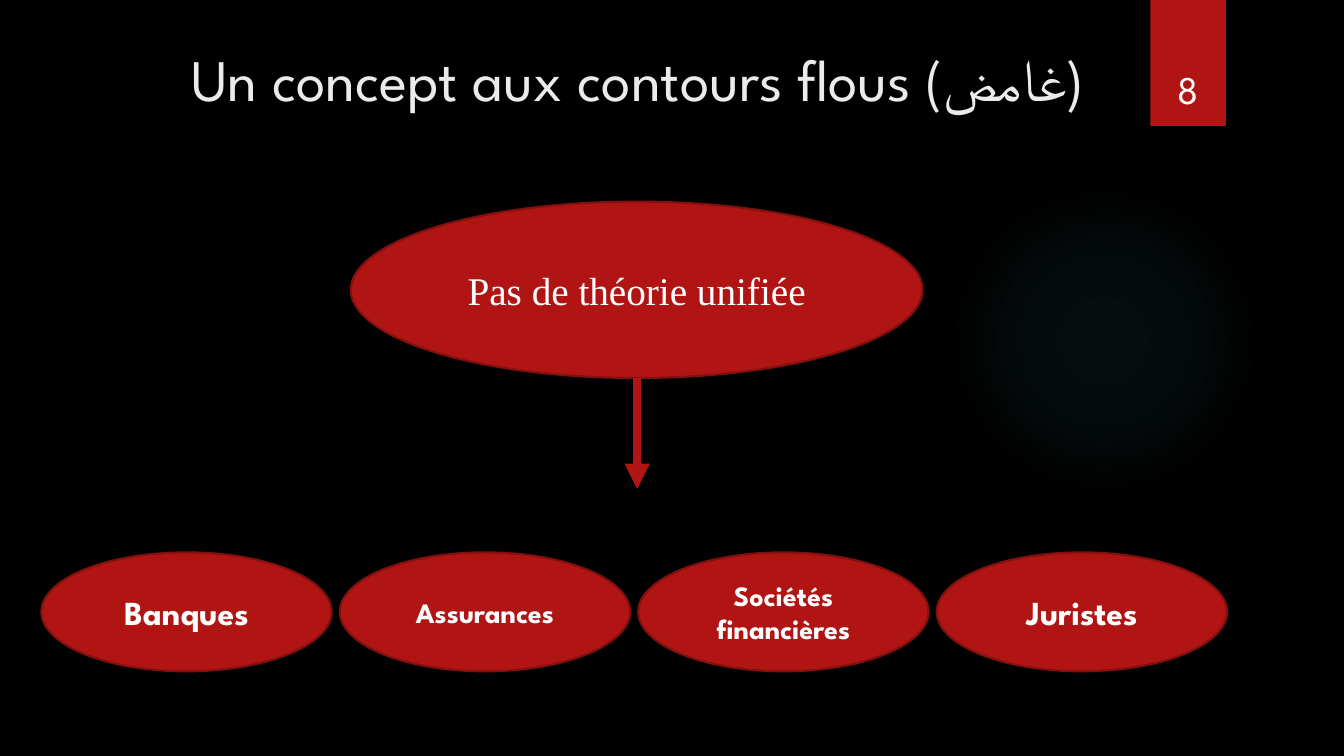
from lxml import etree
from pptx import Presentation
from pptx.dml.color import RGBColor
from pptx.enum.shapes import MSO_CONNECTOR, MSO_SHAPE
from pptx.enum.text import MSO_ANCHOR, PP_ALIGN
from pptx.oxml import parse_xml
from pptx.oxml.ns import nsdecls, qn
from pptx.util import Inches, Pt

BLACK = RGBColor(0x00, 0x00, 0x00)
WHITE = RGBColor(0xFF, 0xFF, 0xFF)
LIGHT_GREY = RGBColor(0xEB, 0xEB, 0xEB)
RED = RGBColor(0xB0, 0x15, 0x13)
DARK_RED = RGBColor(0x82, 0x10, 0x0E)
TEAL = RGBColor(0x50, 0xB9, 0xC1)

HEADING_FONT = "League Spartan"
BODY_FONT = "Times New Roman"


class SlideBuilder:
    """Holds the slide and draws its elements in one style."""

    def __init__(self, presentation):
        self.slide = presentation.slides.add_slide(presentation.slide_layouts[5])
        self.slide.background.fill.solid()
        self.slide.background.fill.fore_color.rgb = BLACK

    def set_text(self, shape, text, size, font=HEADING_FONT, color=WHITE,
                 bold=False, anchor=MSO_ANCHOR.MIDDLE):
        frame = shape.text_frame
        frame.text = text
        frame.word_wrap = True
        frame.vertical_anchor = anchor
        paragraph = frame.paragraphs[0]
        paragraph.alignment = PP_ALIGN.CENTER
        run_font = paragraph.runs[0].font
        run_font.name = font
        run_font.size = Pt(size)
        run_font.bold = bold
        run_font.color.rgb = color

    def title(self, text, left, top, width, height):
        title = self.slide.shapes.title
        title.left, title.top = Inches(left), Inches(top)
        title.width, title.height = Inches(width), Inches(height)
        self.set_text(title, text, 42, color=LIGHT_GREY, anchor=MSO_ANCHOR.TOP)

    def shape(self, kind, left, top, width, height, outlined=False):
        shape = self.slide.shapes.add_shape(
            kind, Inches(left), Inches(top), Inches(width), Inches(height))
        shape.shadow.inherit = False
        shape.fill.solid()
        shape.fill.fore_color.rgb = RED
        if outlined:
            shape.line.color.rgb = DARK_RED
            shape.line.width = Pt(1.5)
        else:
            shape.line.fill.background()
        return shape

    def bubble(self, text, left, top, width, height, size, **style):
        bubble = self.shape(MSO_SHAPE.OVAL, left, top, width, height, outlined=True)
        self.set_text(bubble, text, size, **style)

    def glow(self, left, top, diameter, stops):
        glow = self.shape(MSO_SHAPE.OVAL, left, top, diameter, diameter)
        stop_xml = "".join(
            f'<a:gs pos="{position * 1000}"><a:srgbClr val="{TEAL}">'
            f'<a:alpha val="{opacity * 1000}"/></a:srgbClr></a:gs>'
            for position, opacity in stops)
        gradient = parse_xml(
            f'<a:gradFill {nsdecls("a")} rotWithShape="1"><a:gsLst>{stop_xml}</a:gsLst>'
            '<a:path path="circle"><a:fillToRect l="50000" t="50000" r="50000" b="50000"/>'
            '</a:path></a:gradFill>')
        properties = glow.element.spPr
        properties.replace(properties.find(qn("a:solidFill")), gradient)

    def text_box(self, text, left, top, width, height, size, **style):
        box = self.slide.shapes.add_textbox(
            Inches(left), Inches(top), Inches(width), Inches(height))
        self.set_text(box, text, size, **style)

    def arrow_down(self, x, top, bottom):
        arrow = self.slide.shapes.add_connector(
            MSO_CONNECTOR.STRAIGHT, Inches(x), Inches(top), Inches(x), Inches(bottom))
        arrow.line.color.rgb = RED
        arrow.line.width = Pt(6)
        properties = arrow.element.spPr
        etree.SubElement(properties.find(qn("a:ln")), qn("a:tailEnd"), type="triangle")
        etree.SubElement(properties, qn("a:effectLst"))


def main():
    presentation = Presentation()
    presentation.slide_width = Inches(13.33)
    presentation.slide_height = Inches(7.5)
    builder = SlideBuilder(presentation)

    # Background glow and page ribbon
    builder.glow(9.41, 1.83, 3.08, [(0, 7), (36, 6), (69, 0)])
    builder.shape(MSO_SHAPE.RECTANGLE, 11.41, 0, 0.75, 1.25)

    # Title and page number
    builder.title("Un concept aux contours flous (غامض)", 1.18, 0.37, 10.29, 1.53)
    builder.text_box("8", 11.32, 0.32, 0.92, 0.84, 28, anchor=MSO_ANCHOR.BOTTOM)

    # Main idea with its arrow
    builder.bubble("Pas de théorie unifiée", 3.48, 2, 5.67, 1.75, 28, font=BODY_FONT)
    builder.arrow_down(6.32, 3.75, 4.85)

    # Row of professions
    professions = [("Banques", 24), ("Assurances", 20),
                   ("Sociétés financières", 20), ("Juristes", 24)]
    for index, (name, size) in enumerate(professions):
        builder.bubble(name, 0.41 + 2.96 * index, 5.48, 2.88, 1.18, size, bold=True)

    presentation.save("out.pptx")


if __name__ == "__main__":
    main()
